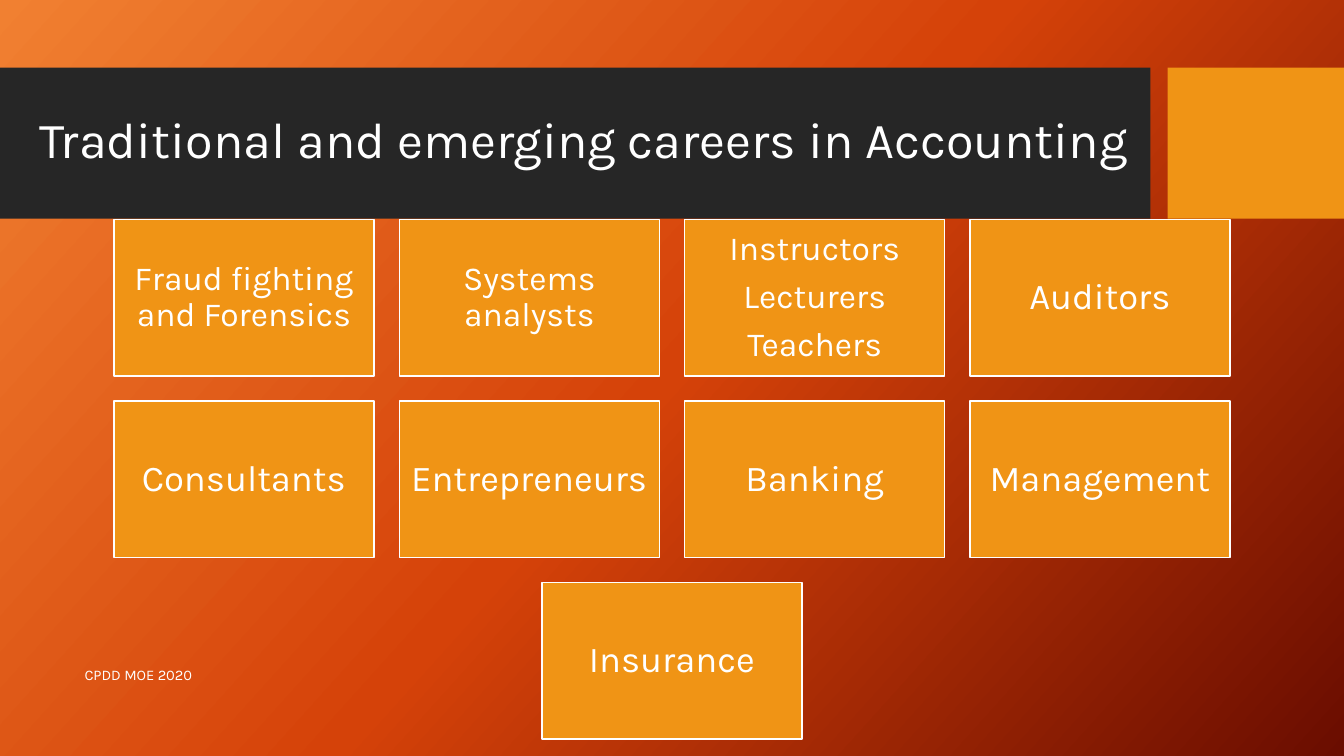
from copy import deepcopy
from dataclasses import dataclass

from pptx import Presentation
from pptx.dml.color import RGBColor
from pptx.enum.shapes import MSO_SHAPE
from pptx.enum.text import MSO_ANCHOR, MSO_AUTO_SIZE, PP_ALIGN
from pptx.oxml.ns import qn
from pptx.shapes.autoshape import Shape
from pptx.slide import Slide
from pptx.util import Inches, Pt

RECT = MSO_SHAPE.RECTANGLE
MIDDLE = MSO_ANCHOR.MIDDLE
FIXED = MSO_AUTO_SIZE.NONE
LEFT, CENTER = PP_ALIGN.LEFT, PP_ALIGN.CENTER

FONT = "Karla"
WHITE, DARK, AMBER = "FFFFFF", "262626", "F09415"
GLOW = [(0, "F18031"), (0.5, "D54209"), (1, "6A0D00")]
WIDE, HIGH = 13.33, 7.5
BOX_W, BOX_H, GAP, TOP = 2.58, 1.55, 0.25, 2.18


@dataclass
class Band:
    left: float
    width: float
    color: str


@dataclass
class Job:
    text: str
    size: float = 26
    inset: float = 0.11


BANDS = [Band(0, 11.41, DARK), Band(11.58, 1.75, AMBER)]
ROWS = [
    [
        Job("Fraud fighting and Forensics", 24, 0.1),
        Job("Systems analysts", 24, 0.1),
        Job("Instructors\nLecturers\nTeachers", 24, 0.1),
        Job("Auditors"),
    ],
    [Job("Consultants"), Job("Entrepreneurs"), Job("Banking"), Job("Management")],
    [Job("Insurance")],
]


def color(code: str) -> RGBColor:
    return RGBColor.from_string(code)


def apply(target: object, values: dict) -> None:
    for name, value in values.items():
        setattr(target, name, value)


def place(shape: Shape, left: float, top: float, width: float, height: float) -> None:
    names = ("left", "top", "width", "height")
    apply(shape, dict(zip(names, map(Inches, (left, top, width, height)))))


def write(shape: Shape, text: str, size: float, form: dict, inset: float = 0.1) -> None:
    frame = shape.text_frame
    frame.text = text
    apply(frame, {"word_wrap": True, "auto_size": FIXED, "vertical_anchor": MIDDLE})
    for side in ("left", "top", "right", "bottom"):
        setattr(frame, f"margin_{side}", Inches(inset))
    for para in frame.paragraphs:
        apply(para, form)
        apply(para.font, {"name": FONT, "size": Pt(size)})
        para.font.color.rgb = color(WHITE)


def block(slide: Slide, left: float, top: float, width: float, height: float, fill: str) -> Shape:
    shape = slide.shapes.add_shape(RECT, *map(Inches, (left, top, width, height)))
    shape.shadow.inherit = False
    shape.fill.solid()
    shape.fill.fore_color.rgb = color(fill)
    shape.line.fill.background()
    return shape


def paint(slide: Slide) -> None:
    fill = slide.background.fill
    fill.gradient()
    stops = next(slide.element.iter(qn("a:gsLst")))
    stops.append(deepcopy(stops[-1]))
    fill.gradient_angle = 360 - 42
    for stop, (spot, code) in zip(fill.gradient_stops, GLOW):
        stop.position = spot
        stop.color.rgb = color(code)


def draw_job(slide: Slide, job: Job, left: float, top: float) -> None:
    box = block(slide, left, top, BOX_W, BOX_H, AMBER)
    box.line.color.rgb = color(WHITE)
    box.line.width = Pt(1)
    form = {"alignment": CENTER, "line_spacing": 0.9, "space_after": Pt(job.size * 0.35)}
    write(box, job.text, job.size, form, job.inset)


def main() -> None:
    deck = Presentation()
    apply(deck, {"slide_width": Inches(WIDE), "slide_height": Inches(HIGH)})
    slide = deck.slides.add_slide(deck.slide_layouts[5])
    paint(slide)

    for band in BANDS:
        block(slide, band.left, 0.67, band.width, 1.5, band.color)

    title = slide.shapes.title
    place(title, 0.29, 0.82, 11.04, 1.18)
    form = {"alignment": LEFT, "line_spacing": 0.9}
    write(title, "Traditional and emerging careers in Accounting", 36, form)
    slide.shapes.element.append(title.element)

    for row, jobs in enumerate(ROWS):
        span = len(jobs) * (BOX_W + GAP) - GAP
        for col, job in enumerate(jobs):
            left = (WIDE - span) / 2 + col * (BOX_W + GAP)
            draw_job(slide, job, left, TOP + row * (BOX_H + GAP))

    foot = slide.shapes.add_textbox(*map(Inches, (0.74, 6.49, 7.51, 0.4)))
    write(foot, "CPDD MOE 2020", 10.5, {"alignment": LEFT})

    deck.save("out.pptx")


if __name__ == "__main__":
    main()
